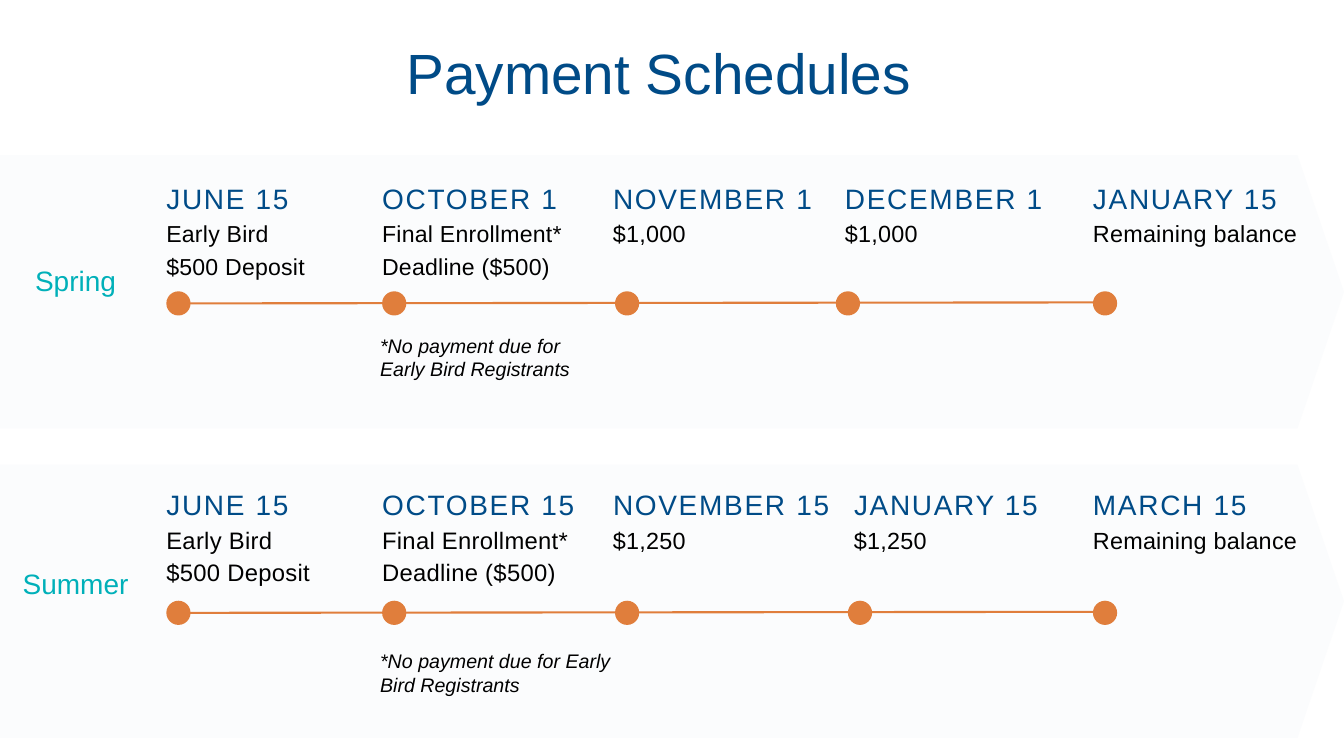
from pptx import Presentation
from pptx.dml.color import RGBColor
from pptx.enum.shapes import MSO_CONNECTOR, MSO_SHAPE
from pptx.enum.text import PP_ALIGN
from pptx.oxml.ns import qn
from pptx.util import Inches, Pt
from lxml.etree import SubElement

INK = {"blue": "004B87", "teal": "00B0B9", "orange": "E07E3C", "band": "FBFCFD", "black": "000000"}

deck = Presentation()
deck.slide_width, deck.slide_height = Inches(13.33), Inches(7.5)
slide = deck.slides.add_slide(deck.slide_layouts[6])


def shape(kind, left, top, width, height, color):
    item = slide.shapes.add_shape(kind, Inches(left), Inches(top), Inches(width), Inches(height))
    item.shadow.inherit = False
    item.fill.solid()
    item.fill.fore_color.rgb = RGBColor.from_string(INK[color])
    item.line.fill.background()
    return item


def text(lines, left, top, width, height, size, color, lead=None, space=0, align=PP_ALIGN.LEFT, slant=False):
    box = slide.shapes.add_textbox(Inches(left), Inches(top), Inches(width), Inches(height))
    frame = box.text_frame
    frame.word_wrap = True
    frame.margin_left = frame.margin_right = frame.margin_top = frame.margin_bottom = 0
    frame.text = lines
    for para in frame.paragraphs:
        para.alignment = align
        if lead:
            para.line_spacing = Pt(lead)
        para.font.name = "Arial"
        para.font.size = Pt(size)
        para.font.italic = slant
        para.font.color.rgb = RGBColor.from_string(INK[color])
        for run in para.runs:
            run._r.get_or_add_rPr().set("spc", str(space))


text("Payment Schedules", 2.51, 0.37, 8.05, 0.65, 40.5, "blue", 48.8, align=PP_ALIGN.CENTER)

early = "Early Bird\n$500 Deposit"
final = "Final Enrollment*\nDeadline ($500)"
rest = "Remaining balance"
terms = [
    {
        "name": "Spring", "top": 1.54, "label": 2.56, "dates": 1.77, "start": 1.77, "size": 16.5,
        "note": ("*No payment due for Early Bird Registrants", 3.31, 2.23),
        "steps": [
            (1.65, 1.65, "JUNE 15", early),
            (3.79, 3.79, "OCTOBER 1", final),
            (6.08, 6.1, "NOVEMBER 1", "$1,000"),
            (8.38, 8.29, "DECEMBER 1", "$1,000"),
            (10.84, 10.84, "JANUARY 15", rest),
        ],
    },
    {
        "name": "Summer", "top": 4.61, "label": 5.56, "dates": 4.81, "start": 1.8, "size": 17,
        "note": ("*No payment due for Early Bird Registrants", 6.44, 2.63),
        "steps": [
            (1.65, 1.65, "JUNE 15", early),
            (3.79, 3.79, "OCTOBER 15", final),
            (6.08, 6.1, "NOVEMBER 15", "$1,250"),
            (8.47, 8.41, "JANUARY 15", "$1,250"),
            (10.84, 10.84, "MARCH 15", rest),
        ],
    },
]

for term in terms:
    top, start = term["top"], term["start"]
    band = shape(MSO_SHAPE.PENTAGON, 0, top, 13.33, 2.71, "band")
    band.adjustments[0] = 0.17

    line = slide.shapes.add_connector(
        MSO_CONNECTOR.STRAIGHT, Inches(start), Inches(top + 1.47), Inches(start + 9.07), Inches(top + 1.46))
    line.line.color.rgb = RGBColor.from_string(INK["orange"])
    line.line.width = Pt(1.5)
    SubElement(line._element.spPr, qn("a:effectLst"))

    text(term["name"], 0.18, term["label"], 1.14, 0.36, 20, "teal", 28, align=PP_ALIGN.CENTER)

    for left, dot, date, due in term["steps"]:
        shape(MSO_SHAPE.OVAL, dot, top + 1.35, 0.24, 0.24, "orange")
        text(date, left, term["dates"], 2.45, 0.34, 20, "blue", 26, 120)
        size = term["size"] if "\n" in due else 16.7
        text(due, left, term["dates"] + 0.36, 2.14, 0.62, size, "black", 23.3, 20)

    note, level, width = term["note"]
    text(note, 3.77, level, width, 0.47, 14, "black", slant=True)

deck.save("out.pptx")
